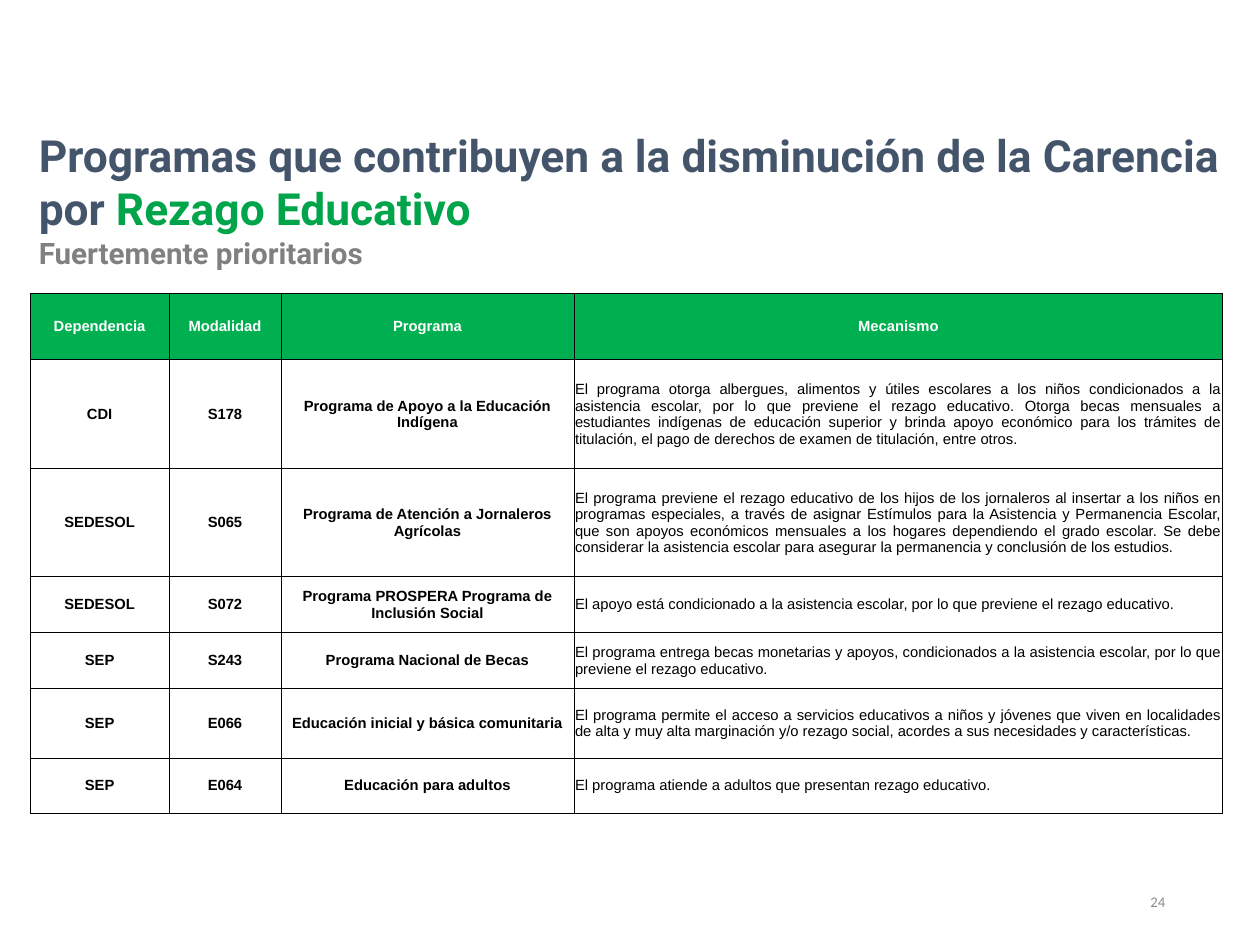
"""Build the slide listing the programmes that reduce the educational gap."""
from lxml import etree
from pptx import Presentation
from pptx import util as u
from pptx.dml.color import RGBColor
from pptx.enum import text
from pptx.oxml import ns

SLATE = RGBColor(0x44, 0x54, 0x6A)
GREEN = RGBColor(0x00, 0xA4, 0x4A)
HEADER = RGBColor(0x00, 0xB0, 0x50)
GRAY = RGBColor(0x80, 0x80, 0x80)
PALE = RGBColor(0x8C, 0x8C, 0x8C)
BLACK = RGBColor(0, 0, 0)
WHITE = RGBColor(255, 255, 255)
A = text.PP_ALIGN
MID = text.MSO_ANCHOR.MIDDLE

prs = Presentation()
prs.slide_width, prs.slide_height = u.Inches(14.22), u.Inches(10.67)
W, H = prs.slide_width / 100, prs.slide_height / 100
s = prs.slides.add_slide(prs.slide_layouts[6])


def box(left, top, width, height):
    """Turn percentages of the slide into lengths."""
    return [u.Emu(round(v)) for v in (left * W, top * H, width * W, height * H)]


def write(p, words, color, **fmt):
    """Add a run to a paragraph with the given font values."""
    r = p.add_run()
    r.text = words
    r.font.color.rgb = color
    for key, value in fmt.items():
        setattr(r.font, key, value)


heading = dict(name="Roboto", size=u.Pt(36), bold=True)
tf = s.shapes.add_textbox(*box(2.39, 13.12, 95.22, 4.4)).text_frame
tf.word_wrap = True
p = tf.paragraphs[0]
write(p, "Programas que contribuyen a la disminución de la Carencia por ", SLATE, **heading)
write(p, "Rezago Educativo", GREEN, **heading)
write(tf.add_paragraph(), "Fuertemente prioritarios", GRAY, **{**heading, "size": u.Pt(24)})

rows = [
    ("Dependencia", "Modalidad", "Programa", "Mecanismo"),
    ("CDI", "S178", "Programa de Apoyo a la Educación Indígena",
     "El programa otorga albergues, alimentos y útiles escolares a los niños condicionados a la "
     "asistencia escolar, por lo que previene el rezago educativo. Otorga becas mensuales a "
     "estudiantes indígenas de educación superior y brinda apoyo económico para los trámites de "
     "titulación, el pago de derechos de examen de titulación, entre otros."),
    ("SEDESOL", "S065", "Programa de Atención a Jornaleros Agrícolas",
     "El programa previene el rezago educativo de los hijos de los jornaleros al insertar a los "
     "niños en programas especiales, a través de asignar Estímulos para la Asistencia y "
     "Permanencia Escolar, que son apoyos económicos mensuales a los hogares dependiendo el grado "
     "escolar. Se debe considerar la asistencia escolar para asegurar la permanencia y conclusión "
     "de los estudios."),
    ("SEDESOL", "S072", "Programa PROSPERA Programa de Inclusión Social",
     "El apoyo está condicionado a la asistencia escolar, por lo que previene el rezago educativo."),
    ("SEP", "S243", "Programa Nacional de Becas",
     "El programa entrega becas monetarias y apoyos, condicionados a la asistencia escolar, por lo "
     "que previene el rezago educativo."),
    ("SEP", "E066", "Educación inicial y básica comunitaria",
     "El programa permite el acceso a servicios educativos a niños y jóvenes que viven en "
     "localidades de alta y muy alta marginación y/o rezago social, acordes a sus necesidades y "
     "características."),
    ("SEP", "E064", "Educación para adultos",
     "El programa atiende a adultos que presentan rezago educativo."),
]
widths = [11.04, 8.86, 23.28, 51.48]
heights = [7.03, 11.48, 11.48, 5.9, 5.9, 7.4, 5.81]
margin = round(0.07 * W)
cell_format = dict(vertical_anchor=MID, margin_left=margin, margin_right=margin,
                   margin_top=margin, margin_bottom=0)

tbl = s.shapes.add_table(len(rows), len(widths),
                         *box(2.39, 31.02, sum(widths), sum(heights))).table
tbl.first_row = tbl.horz_banding = False
for column, width in zip(tbl.columns, widths):
    column.width = round(width * W)
for i, (row, height) in enumerate(zip(rows, heights)):
    tbl.rows[i].height = round(height * H)
    for j, words in enumerate(row):
        c = tbl.cell(i, j)
        for key, value in cell_format.items():
            setattr(c, key, value)
        prose = i > 0 and j == 3
        p = c.text_frame.paragraphs[0]
        p.alignment = A.JUSTIFY if prose else A.CENTER
        write(p, words, BLACK if i else WHITE, name="Arial", size=u.Pt(12), bold=not prose)
        tcPr = c._tc.get_or_add_tcPr()
        for side in ("lnL", "lnR", "lnT", "lnB"):
            ln = etree.SubElement(tcPr, ns.qn(f"a:{side}"), w=str(u.Pt(0.5)))
            fill = etree.SubElement(ln, ns.qn("a:solidFill"))
            etree.SubElement(fill, ns.qn("a:srgbClr"), val=str(BLACK))
        if i:
            c.fill.background()
        else:
            c.fill.solid()
            c.fill.fore_color.rgb = HEADER

tf = s.shapes.add_textbox(*box(70.68, 92.69, 22.5, 5.34)).text_frame
tf.word_wrap = True
tf.vertical_anchor = MID
p = tf.paragraphs[0]
p.alignment = A.RIGHT
write(p, "24", PALE, name="Calibri", size=u.Pt(12))

prs.save("out.pptx")
